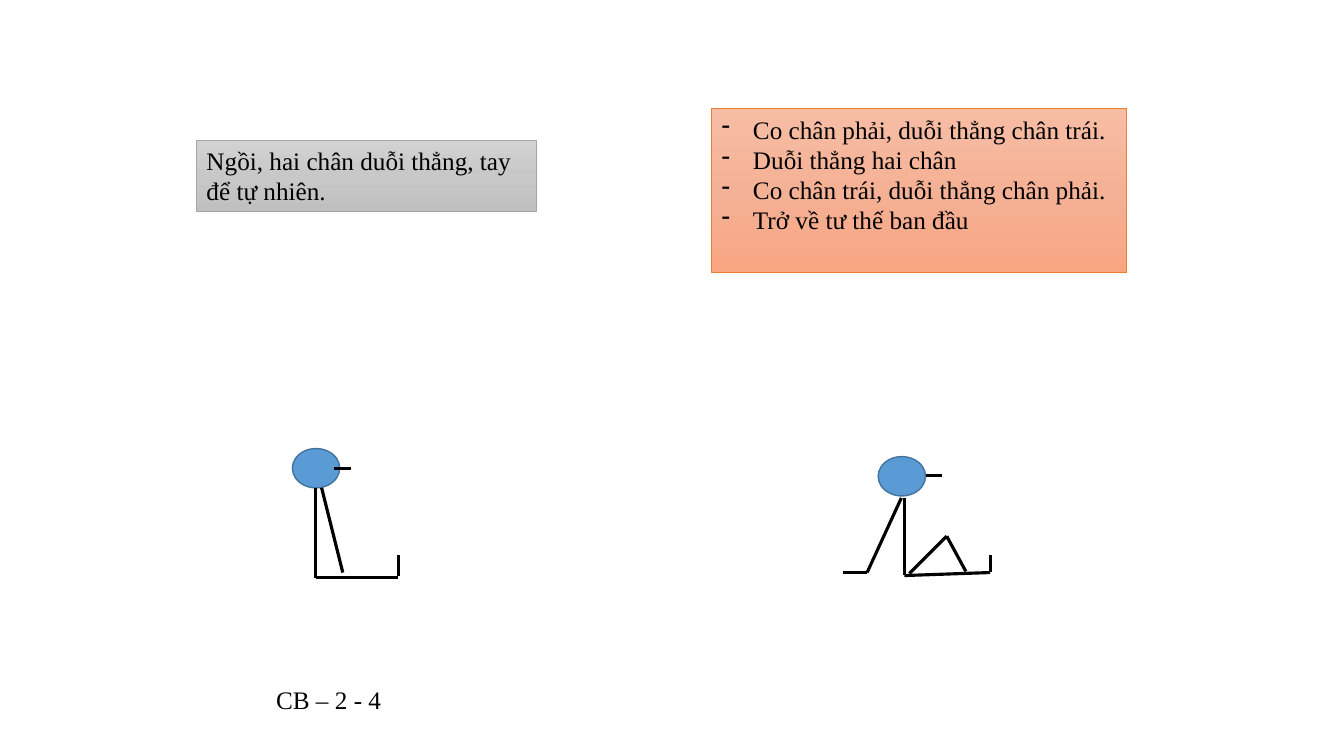
from copy import deepcopy

from lxml.etree import SubElement
from pptx import Presentation
from pptx.dml.color import RGBColor
from pptx.enum.shapes import MSO_CONNECTOR, MSO_SHAPE
from pptx.enum.text import MSO_ANCHOR, PP_ALIGN
from pptx.oxml.ns import qn
from pptx.util import Inches, Pt

COLORS = {
    "ink": "000000",
    "head": "5B9BD5",
    "head_edge": "43739E",
    "gray_edge": "A5A5A5",
    "orange_edge": "ED7D31",
}
GRADIENTS = {
    "gray": ("D2D2D2", "C8C8C8", "C0C0C0"),
    "orange": ("F7BDA5", "F5B196", "F8A582"),
}


class ExerciseSlide:
    font_name = "Times New Roman"
    font_size = Pt(18)
    limb_width = Pt(2.25)
    bullet_indent = Inches(0.31)

    def __init__(self, deck):
        self.slide = deck.slides.add_slide(deck.slide_layouts[6])

    def color(self, name):
        return RGBColor.from_string(COLORS[name])

    def fill_text(self, box, lines, bullet=None):
        frame = box.text_frame
        frame.word_wrap = True
        frame.vertical_anchor = MSO_ANCHOR.TOP
        frame.text = "\n".join(lines)
        for para in frame.paragraphs:
            para.alignment = PP_ALIGN.LEFT
            for span in para.runs:
                span.font.name = self.font_name
                span.font.size = self.font_size
                span.font.color.rgb = self.color("ink")
            if bullet:
                properties = para._p.get_or_add_pPr()
                properties.set("marL", str(self.bullet_indent))
                properties.set("indent", str(-self.bullet_indent))
                SubElement(properties, qn("a:buFontTx"))
                SubElement(properties, qn("a:buChar")).set("char", bullet)

    def shape(self, kind, place, edge, edge_width):
        shape = self.slide.shapes.add_shape(kind, *map(Inches, place))
        shape.shadow.inherit = False
        shape.line.color.rgb = self.color(edge)
        shape.line.width = Pt(edge_width)
        return shape

    def panel(self, place, tone, lines, bullet=None):
        box = self.shape(MSO_SHAPE.RECTANGLE, place, f"{tone}_edge", 0.5)
        box.fill.gradient()
        box.fill.gradient_angle = 270
        stop_list = next(box._element.iter(qn("a:gsLst")))
        stop_list.insert(1, deepcopy(stop_list[0]))
        stops = box.fill.gradient_stops
        for index, (stop, shade) in enumerate(zip(stops, GRADIENTS[tone])):
            stop.position = index / 2
            stop.color.rgb = RGBColor.from_string(shade)
        self.fill_text(box, lines, bullet)

    def caption(self, place, text):
        box = self.slide.shapes.add_textbox(*map(Inches, place))
        self.fill_text(box, [text])

    def head(self, left, top):
        place = (left, top, 0.47, 0.39)
        head = self.shape(MSO_SHAPE.OVAL, place, "head_edge", 1)
        head.fill.solid()
        head.fill.fore_color.rgb = self.color("head")

    def limb(self, *ends):
        limb = self.slide.shapes.add_connector(
            MSO_CONNECTOR.STRAIGHT, *map(Inches, ends))
        limb.line.color.rgb = self.color("ink")
        limb.line.width = self.limb_width
        SubElement(limb._element.spPr, qn("a:effectLst"))

    def figure(self, head, limbs):
        self.head(*head)
        for ends in limbs:
            self.limb(*ends)


def main():
    deck = Presentation()
    deck.slide_width = Inches(13.33)
    deck.slide_height = Inches(7.5)
    page = ExerciseSlide(deck)

    # Instructions
    page.panel((1.95, 1.39, 3.37, 0.71), "gray",
               ["Ngồi, hai chân duỗi thẳng, tay để tự nhiên."])
    page.panel((7.06, 1.08, 4.11, 1.62), "orange", [
        "Co chân phải, duỗi thẳng chân trái.",
        "Duỗi thẳng hai chân",
        "Co chân trái, duỗi thẳng chân phải.",
        "Trở về tư thế ban đầu",
    ], bullet="-")

    # Starting pose: both legs straight
    page.figure((2.9, 4.45), [
        (3.13, 4.84, 3.13, 5.73),  # back
        (3.19, 4.84, 3.4, 5.68),   # arm
        (3.31, 4.65, 3.48, 4.65),  # nose
        (3.13, 5.73, 3.95, 5.73),  # legs
        (3.95, 5.51, 3.95, 5.71),  # foot
    ])

    # Exercise pose: one leg bent
    page.figure((8.71, 4.53), [
        (8.97, 4.94, 8.97, 5.7),   # back
        (8.94, 4.94, 8.6, 5.68),   # arm
        (8.36, 5.68, 8.6, 5.68),   # hand
        (9.18, 4.72, 9.34, 4.72),  # nose
        (8.97, 5.71, 9.82, 5.68),  # straight leg
        (9.82, 5.67, 9.82, 5.51),  # foot
        (9.02, 5.69, 9.39, 5.32),  # bent thigh
        (9.39, 5.32, 9.58, 5.67),  # bent shin
    ])

    # Exercise code
    page.caption((2.64, 6.74, 1.35, 0.4), "CB – 2 - 4")

    deck.save("out.pptx")


if __name__ == "__main__":
    main()
